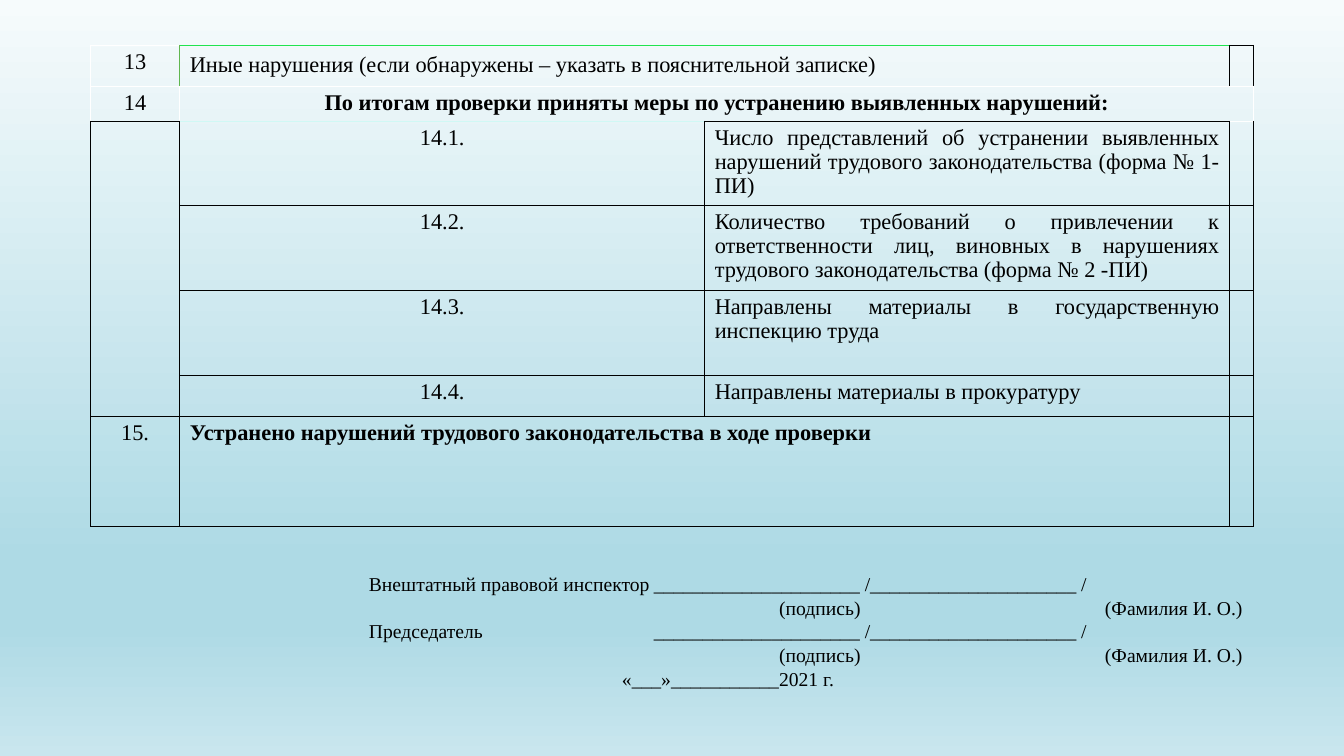
"""Build the inspection results slide with its table and signature lines."""
from lxml.etree import SubElement
from pptx import Presentation
from pptx.dml.color import RGBColor
from pptx.enum.text import MSO_ANCHOR, MSO_AUTO_SIZE, PP_ALIGN
from pptx.oxml.ns import qn
from pptx.util import Pt

HUES = {"black": "000000", "white": "FFFFFF", "green": "60B64F",
        "lime": "20E44F", "mint": "D0F8F5",
        "pale": "F6FBFC", "blue": "AEDAE5", "sky": "C9E6EE"}
FACE = "Times New Roman"


def style(para, size, align, bold=False):
    para.alignment = align
    for run in para.runs:
        run.font.name = FACE
        run.font.size = Pt(size)
        run.font.bold = bold
        run.font.color.rgb = RGBColor.from_string(HUES["black"])


def edge(cell, side, hue):
    line = SubElement(cell._tc.get_or_add_tcPr(), qn("a:ln" + side), w=str(Pt(0.75)))
    fill = SubElement(line, qn("a:solidFill"))
    SubElement(fill, qn("a:srgbClr"), val=HUES[hue])


deck = Presentation()
deck.slide_width, deck.slide_height = Pt(960), Pt(540)
slide = deck.slides.add_slide(deck.slide_layouts[5])

back = slide.background.fill
back.gradient()
back.gradient_angle = 270
stops = back._fill._gradFill.find(qn("a:gsLst"))
for stop in list(stops):
    stops.remove(stop)
for place, hue in [(0, "pale"), (74, "blue"), (83, "blue"), (100, "sky")]:
    stop = SubElement(stops, qn("a:gs"), pos=str(place * 1000))
    SubElement(stop, qn("a:srgbClr"), val=HUES[hue])

title = slide.shapes.title
title.left, title.top, title.width, title.height = Pt(132.5), Pt(393.8), Pt(779.8), Pt(131)
frame = title.text_frame
frame.auto_size = MSO_AUTO_SIZE.NONE
frame.word_wrap = True
frame.vertical_anchor = MSO_ANCHOR.TOP
frame.margin_left, frame.margin_top = Pt(131), Pt(15)
frame.margin_right = frame.margin_bottom = 0

BLANK = "_____________________ /_____________________ /"
NOTE = ("\t(подпись)\t(Фамилия И. О.)", [293, 525.8])
lines = [("Внештатный правовой инспектор\t" + BLANK, [203.5]), NOTE,
         ("Председатель\t" + BLANK, [203.5]), NOTE,
         ("\t«___»___________2021 г.", [180.8])]
for i, (words, tabs) in enumerate(lines):
    para = frame.paragraphs[0] if i == 0 else frame.add_paragraph()
    para.text = words
    para.line_spacing = Pt(16.8)
    para.space_before = Pt(0)
    tab_list = SubElement(para._p.get_or_add_pPr(), qn("a:tabLst"))
    for tab in tabs:
        SubElement(tab_list, qn("a:tab"), pos=str(Pt(tab)), algn="l")
    style(para, 14, PP_ALIGN.LEFT)

WIDTHS = [63.8, 375, 375, 17.2]
HEIGHTS = [28.4, 25.2, 60.3, 60.5, 60.5, 28, 78.6]
table = slide.shapes.add_table(7, 4, Pt(64.6), Pt(32.3),
                               Pt(sum(WIDTHS)), Pt(sum(HEIGHTS))).table
table.first_row = table.horz_banding = False
for col, width in zip(table.columns, WIDTHS):
    col.width = Pt(width)
for row, height in zip(table.rows, HEIGHTS):
    row.height = Pt(height)
for top, left, low, right in [(0, 1, 0, 2), (1, 1, 1, 3), (2, 0, 5, 0), (6, 1, 6, 2)]:
    table.cell(top, left).merge(table.cell(low, right))

MID, LEFT, FULL = PP_ALIGN.CENTER, PP_ALIGN.LEFT, PP_ALIGN.JUSTIFY
texts = {
    (0, 0): ("13", MID),
    (0, 1): ("Иные нарушения (если обнаружены – указать в пояснительной записке)", LEFT),
    (1, 0): ("14", MID),
    (1, 1): ("По итогам проверки приняты меры по устранению выявленных нарушений:", MID),
    (6, 0): ("15.", MID),
    (6, 1): ("Устранено нарушений трудового законодательства в ходе проверки", FULL),
}
steps = [
    "Число представлений об устранении выявленных нарушений трудового "
    "законодательства (форма № 1-ПИ)",
    "Количество требований о привлечении к ответственности лиц, виновных "
    "в нарушениях трудового законодательства (форма № 2 -ПИ)",
    "Направлены материалы в государственную инспекцию труда",
    "Направлены материалы в прокуратуру",
]
for i, step in enumerate(steps, 1):
    texts[i + 1, 1] = (f"14.{i}.", MID)
    texts[i + 1, 2] = (step, FULL)

edges = {
    (0, 0): {"L": "white", "T": "white", "R": "green", "B": "white"},
    (0, 1): {"L": "green", "T": "lime", "B": "white"},
    (0, 3): {"B": "white"},
    (1, 0): {"L": "white", "T": "white", "R": "white"},
    (1, 1): {"L": "white", "T": "white", "R": "white", "B": "mint"},
    (2, 1): {"T": "mint"},
    (2, 3): {"T": "white"},
}
for r in range(len(HEIGHTS)):
    for c in range(len(WIDTHS)):
        cell = table.cell(r, c)
        if not cell.is_spanned:
            for side in "LRTB":
                edge(cell, side, edges.get((r, c), {}).get(side, "black"))
        cell.fill.background()
        if (r, c) in texts:
            words, align = texts[r, c]
            cell.text_frame.text = words
            para = cell.text_frame.paragraphs[0]
            para.line_spacing = 0.96
            style(para, 16, align, (r, c) in [(1, 1), (6, 1)])
for r in range(2):
    table.cell(r, 1).vertical_anchor = MSO_ANCHOR.MIDDLE

deck.save("out.pptx")
